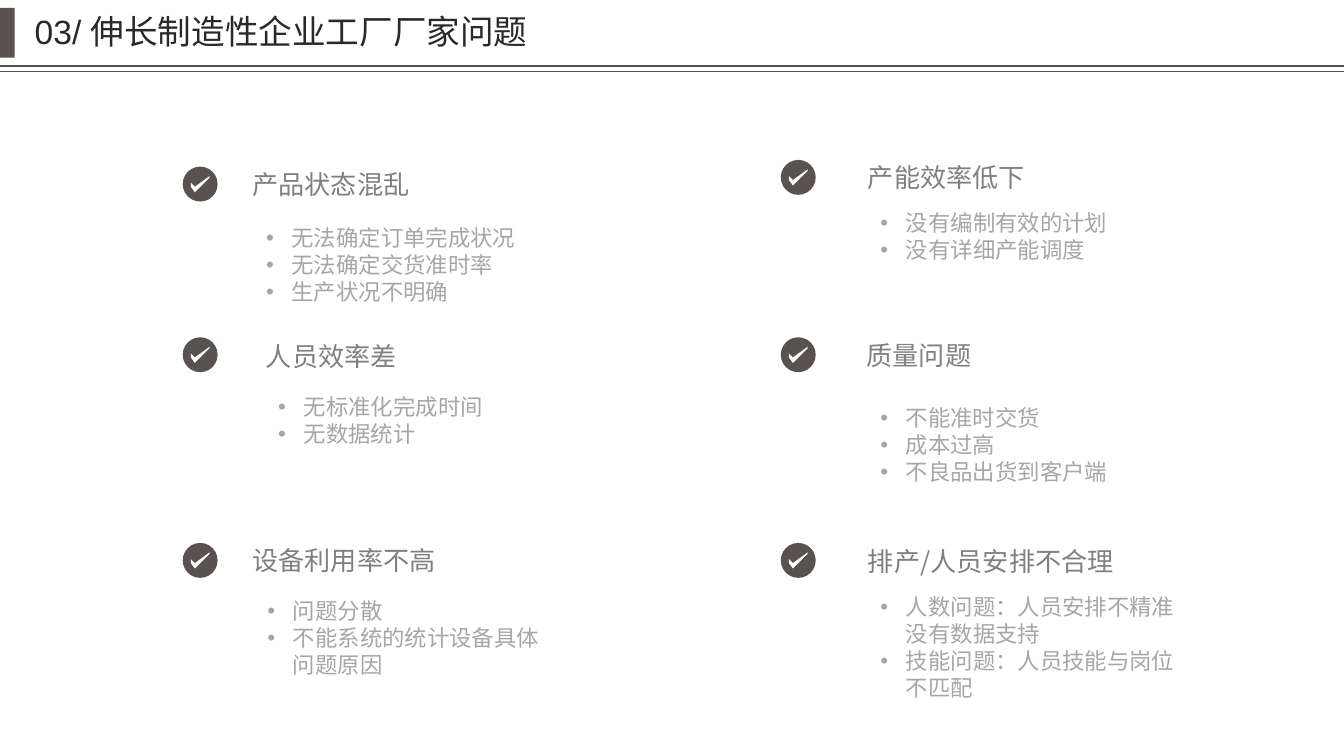
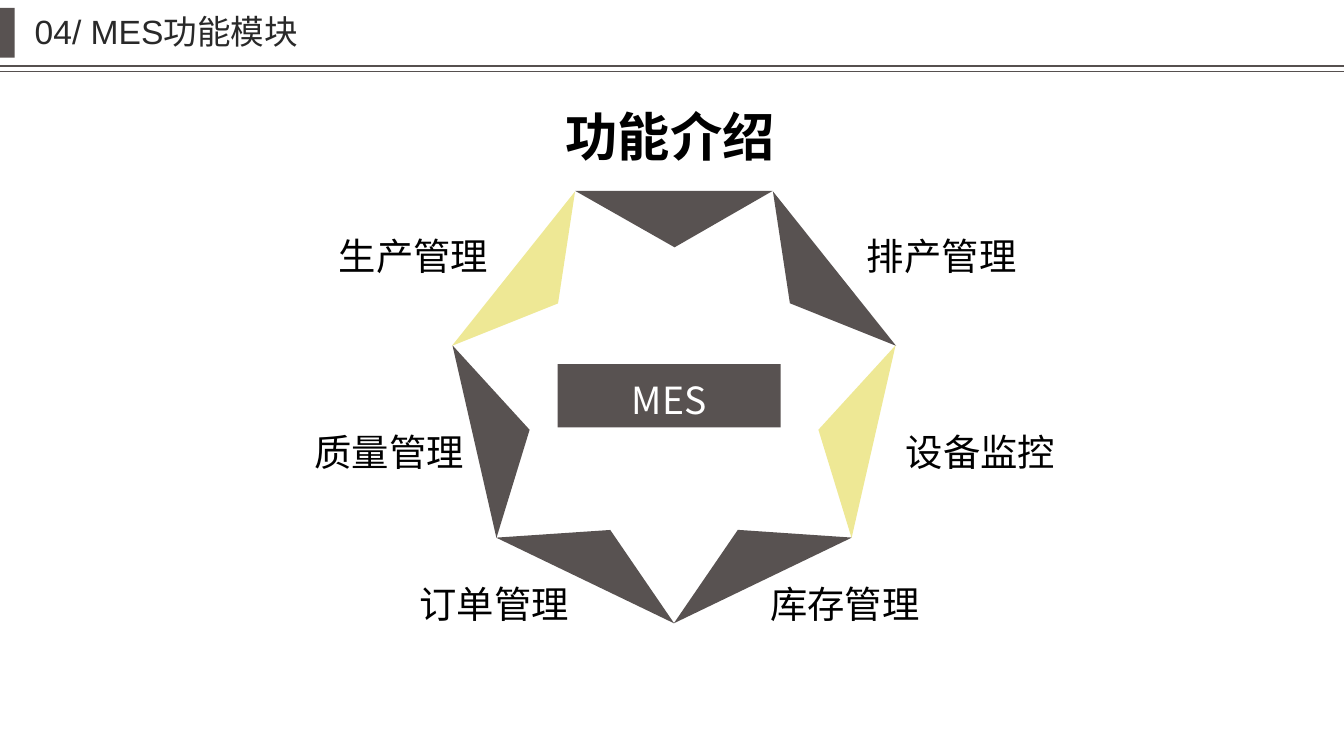
import math
from dataclasses import dataclass

from pptx import Presentation
from pptx.dml.color import RGBColor
from pptx.enum.shapes import MSO_CONNECTOR, MSO_SHAPE
from pptx.enum.text import MSO_ANCHOR, PP_ALIGN
from pptx.oxml.xmlchemy import OxmlElement
from pptx.util import Pt

RECTANGLE, OVAL = MSO_SHAPE.RECTANGLE, MSO_SHAPE.OVAL
STRAIGHT = MSO_CONNECTOR.STRAIGHT
TOP, MIDDLE = MSO_ANCHOR.TOP, MSO_ANCHOR.MIDDLE
LEFT, CENTER = PP_ALIGN.LEFT, PP_ALIGN.CENTER

PX = 9144  # 100 px to the inch
SLIDE_WIDTH = 1000
SLIDE_HEIGHT = SLIDE_WIDTH * 9 / 16


@dataclass(frozen=True)
class Theme:
    dark: str = "585251"
    rule: str = "56504F"
    accent: str = "EEE895"
    white: str = "FFFFFF"
    black: str = "000000"
    title: str = "292929"
    heading: str = "808080"
    body: str = "A6A6A6"
    cjk: str = "Noto Sans CJK SC"
    arial: str = "Arial"
    calibri: str = "Calibri"
    body_size: int = 12
    heading_size: int = 14
    title_size: int = 18
    label_size: int = 20
    caption_size: int = 28
    leading: float = 1.2
    label_leading: float = 1.17


THEME = Theme()


def px(*lengths):
    return [round(length * PX) for length in lengths]


def color(value):
    return RGBColor.from_string(value)


# ---- Shared drawing helpers ----
def paint(shape, fill):
    shape.shadow.inherit = False
    shape.fill.solid()
    shape.fill.fore_color.rgb = color(fill)
    shape.line.fill.background()
    return shape


def add_polygon(shapes, points, fill):
    builder = shapes.build_freeform(*points[0], scale=PX)
    builder.add_line_segments(points[1:], close=True)
    return paint(builder.convert_to_shape(), fill)


def set_frame(shape, insets, anchor):
    frame = shape.text_frame
    frame.word_wrap = True
    frame.vertical_anchor = anchor
    (frame.margin_left, frame.margin_top,
     frame.margin_right, frame.margin_bottom) = px(*insets)
    return frame


def add_run(paragraph, text, size, fill, font, bold=False):
    run = paragraph.add_run()
    run.text = text
    run.font.size = Pt(size)
    run.font.bold = bold
    run.font.color.rgb = color(fill)
    run.font.name = font
    east_asian = OxmlElement("a:ea")
    east_asian.set("typeface", THEME.cjk)
    run.font._element.append(east_asian)


def add_line_of_text(shapes, box, text, size, fill, font, insets=(10, 5, 10, 5),
                     anchor=TOP, leading=None, bold=False):
    frame = set_frame(shapes.add_textbox(*px(*box)), insets, anchor)
    paragraph = frame.paragraphs[0]
    paragraph.alignment = LEFT
    if leading:
        paragraph.line_spacing = Pt(size * leading)
    add_run(paragraph, text, size, fill, font, bold)


def add_bullet(paragraph):
    properties = paragraph._p.get_or_add_pPr()
    properties.set("marL", str(19 * PX))
    properties.set("indent", str(-19 * PX))
    for tag, name, value in (("a:buFont", "typeface", THEME.arial),
                             ("a:buChar", "char", "•")):
        element = OxmlElement(tag)
        element.set(name, value)
        properties.append(element)


# ---- Header band ----
def add_header(slide, title):
    shapes = slide.shapes
    paint(shapes.add_shape(RECTANGLE, *px(0, 6, 11, 37)), THEME.dark)
    for y in (49, 53):
        rule = shapes.add_connector(STRAIGHT, *px(0, y, SLIDE_WIDTH, y))
        rule.line.color.rgb = color(THEME.rule)
        rule.line.width = Pt(0.75)
        rule._element.spPr.append(OxmlElement("a:effectLst"))
    add_line_of_text(shapes, (16, 3, 627, 39), title, THEME.title_size,
                     THEME.title, THEME.arial, leading=THEME.leading)


# ---- Problem list ----
TICK = ((6, 15), (9, 19), (20, 8), (20, 7), (9, 15), (6, 12))


def add_tick_badge(slide, left, top):
    shapes = slide.shapes.add_group_shape().shapes
    paint(shapes.add_shape(OVAL, *px(left, top, 26, 26)), THEME.dark)
    add_polygon(shapes, [(left + x, top + y) for x, y in TICK], THEME.white)


def add_problem(slide, heading, heading_box, points, points_box, font, first_leading=1):
    shapes = slide.shapes.add_group_shape().shapes
    add_line_of_text(shapes, heading_box, heading, THEME.heading_size,
                     THEME.heading, THEME.cjk, anchor=MIDDLE)
    frame = set_frame(shapes.add_textbox(*px(*points_box)), (0, 5, 10, 5), MIDDLE)
    for index, point in enumerate(points):
        paragraph = frame.add_paragraph() if index else frame.paragraphs[0]
        add_bullet(paragraph)
        paragraph.alignment = LEFT
        leading = THEME.body_size * THEME.leading
        paragraph.line_spacing = Pt(leading if index else leading * first_leading)
        add_run(paragraph, point, THEME.body_size, THEME.body, font)


BADGES = ((136, 124), (581, 119), (136, 251), (581, 251), (136, 404), (581, 404))
PROBLEMS = (
    ("产品状态混乱", (178, 120, 182, 34),
     ("无法确定订单完成状况", "无法确定交货准时率", "生产状况不明确"),
     (198, 154, 233, 76), THEME.cjk, 1.5),
    ("产能效率低下", (636, 120, 162, 24),
     ("没有编制有效的计划", "没有详细产能调度"),
     (655, 151, 202, 50), THEME.arial),
    ("人员效率差", (188, 248, 152, 34),
     ("无标准化完成时间", "无数据统计"),
     (207, 282, 202, 61), THEME.arial),
    ("质量问题", (635, 248, 131, 32),
     ("不能准时交货", "成本过高", "不良品出货到客户端"),
     (655, 282, 217, 98), THEME.arial),
    ("设备利用率不高", (178, 404, 172, 25),
     ("问题分散", "不能系统的统计设备具体问题原因"),
     (199, 433, 217, 83), THEME.cjk),
    ("排产/人员安排不合理", (636, 404, 217, 27),
     ("人数问题：人员安排不精准没有数据支持", "技能问题：人员技能与岗位不匹配"),
     (655, 440, 232, 83), THEME.arial),
)


def build_problem_slide(slide):
    add_header(slide, "03/ 伸长制造性企业工厂厂家问题")
    for badge in BADGES:
        add_tick_badge(slide, *badge)
    for problem in PROBLEMS:
        add_problem(slide, *problem)


# ---- Function modules ----
def add_heptagon(slide, left, top, side, depth):
    """Ring of seven inward triangles; left and top locate its upper edge."""
    shapes = slide.shapes.add_group_shape().shapes
    apothem = side / (2 * math.tan(math.pi / 7))
    center_x, center_y = left + side / 2, top + apothem
    radius = apothem - depth / 2
    for index in (3, 4, 5, 6, 0, 1, 2):
        angle = index * math.tau / 7
        x = center_x + radius * math.sin(angle) - side / 2
        y = center_y - radius * math.cos(angle) - depth / 2
        fill = THEME.accent if index in (2, 6) else THEME.dark
        corners = [(x, y), (x + side, y), (x + side / 2, y + depth)]
        triangle = add_polygon(shapes, corners, fill)
        triangle.rotation = math.degrees(angle)


def add_core(slide, box, text):
    core = paint(slide.shapes.add_shape(RECTANGLE, *px(*box)), THEME.dark)
    paragraph = set_frame(core, (7, 4, 7, 4), MIDDLE).paragraphs[0]
    paragraph.alignment = CENTER
    paragraph.line_spacing = 1.15
    add_run(paragraph, text, THEME.label_size, THEME.white, THEME.cjk)


MODULES = (
    ("生产管理", (244, 170, 138, 41), THEME.cjk),
    ("订单管理", (304, 429, 139, 41), THEME.calibri),
    ("库存管理", (565, 429, 142, 41), THEME.calibri),
    ("排产管理", (637, 170, 142, 41), THEME.calibri),
    ("质量管理", (226, 316, 138, 41), THEME.calibri),
    ("设备监控", (666, 316, 138, 41), THEME.calibri),
)


def build_module_slide(slide):
    add_header(slide, "04/ MES功能模块")
    add_heptagon(slide, 428, 142, side=147, depth=42)
    add_core(slide, (415, 271, 166, 47), "MES")
    style = {"insets": (8, 4, 8, 4), "leading": THEME.label_leading}
    for text, box, font in MODULES:
        add_line_of_text(slide.shapes, box, text, THEME.label_size,
                         THEME.black, font, **style)
    add_line_of_text(slide.shapes, (413, 75, 189, 55), "功能介绍",
                     THEME.caption_size, THEME.black, THEME.cjk, bold=True, **style)


def main():
    presentation = Presentation()
    presentation.slide_width, presentation.slide_height = px(SLIDE_WIDTH, SLIDE_HEIGHT)
    blank = presentation.slide_layouts[6]
    for build in (build_problem_slide, build_module_slide):
        build(presentation.slides.add_slide(blank))
    presentation.save("out.pptx")


if __name__ == "__main__":
    main()
